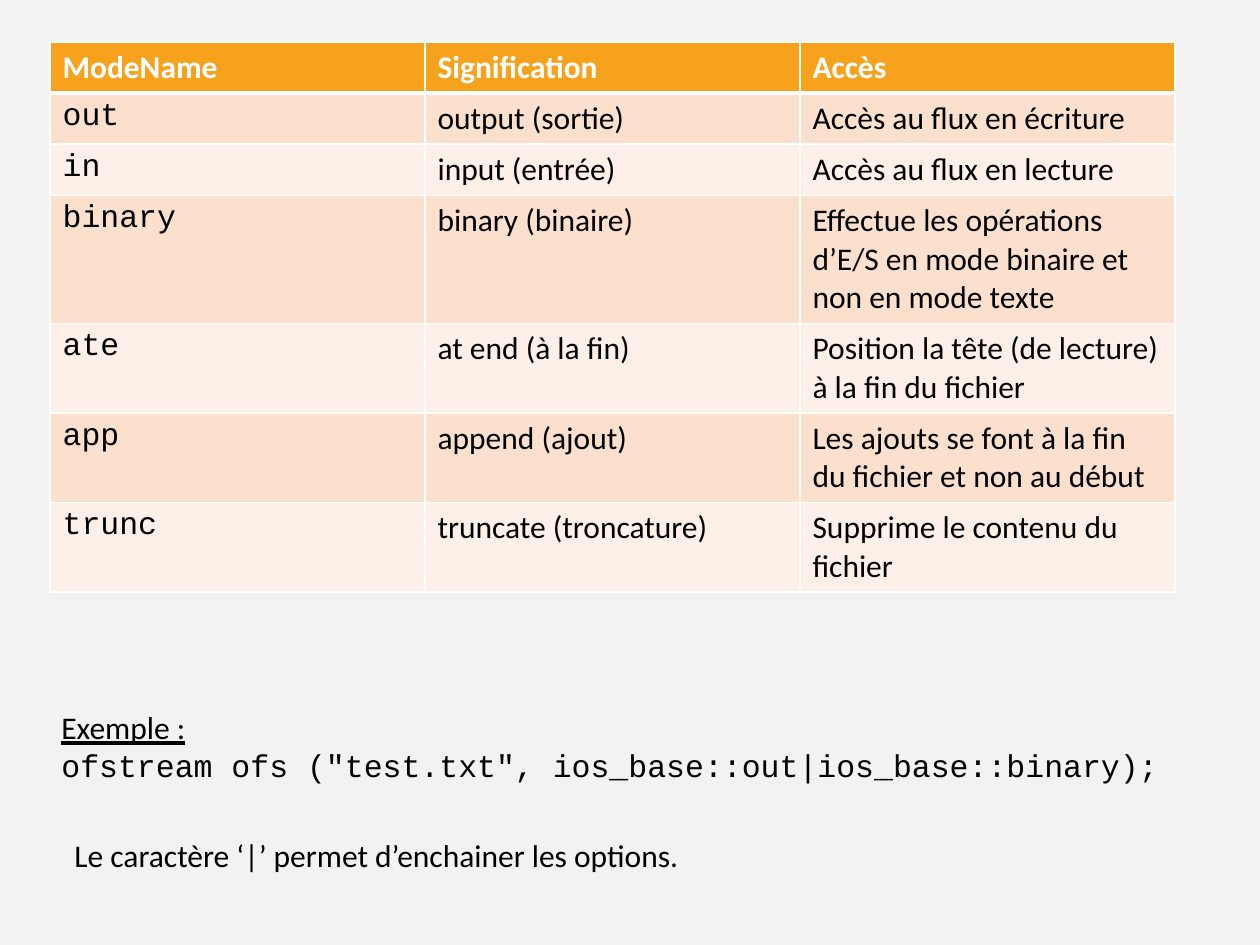
import lxml.etree
import pptx
import pptx.dml.color
import pptx.enum.text
import pptx.oxml.ns
import pptx.util

EMU_PER_PX = 914400 / 126
PROSE, CODE = "Calibri", "Courier New"
BLACK, WHITE, ORANGE = "000000", "FFFFFF", "F6A21D"
BANDS = ("FBE0CD", "FDF0E8")

MODES = [
    ("ModeName", "Signification", "Accès"),
    ("out", "output (sortie)", "Accès au flux en écriture"),
    ("in", "input (entrée)", "Accès au flux en lecture"),
    ("binary", "binary (binaire)",
     "Effectue les opérations d’E/S en mode binaire et non en mode texte"),
    ("ate", "at end (à la fin)",
     "Position la tête (de lecture) à la fin du fichier"),
    ("app", "append (ajout)",
     "Les ajouts se font à la fin du fichier et non au début"),
    ("trunc", "truncate (troncature)", "Supprime le contenu du fichier"),
]


def px(length):
    return pptx.util.Emu(round(length * EMU_PER_PX))


def color(value):
    return pptx.dml.color.RGBColor.from_string(value)


class Deck:
    """Holds the text style and the current slide."""

    def __init__(self, width, height, background, size=18):
        self.presentation = pptx.Presentation()
        self.presentation.slide_width = px(width)
        self.presentation.slide_height = px(height)
        self.size = pptx.util.Pt(size)
        blank = self.presentation.slide_layouts[6]
        self.slide = self.presentation.slides.add_slide(blank)
        fill = self.slide.background.fill
        fill.solid()
        fill.fore_color.rgb = color(background)

    def run(self, paragraph, words, font=PROSE, ink=BLACK, bold=False, underline=False):
        run = paragraph.add_run()
        run.text = words
        run.font.name = font
        run.font.size = self.size
        run.font.color.rgb = color(ink)
        run.font.bold = bold
        run.font.underline = underline

    def text(self, left, top, width, height, *lines):
        """Each line is its words and a dict of run formatting."""
        frame = self.slide.shapes.add_textbox(
            px(left), px(top), px(width), px(height)).text_frame
        frame.word_wrap = True
        frame.auto_size = pptx.enum.text.MSO_AUTO_SIZE.SHAPE_TO_FIT_TEXT
        for index, (words, style) in enumerate(lines):
            paragraph = frame.add_paragraph() if index else frame.paragraphs[0]
            self.run(paragraph, words, **style)

    def borders(self, cell, top=1, bottom=1):
        properties = cell._tc.get_or_add_tcPr()
        widths = {"lnL": 1, "lnR": 1, "lnT": top, "lnB": bottom}
        for position, (side, width) in enumerate(widths.items()):
            line = lxml.etree.Element(
                pptx.oxml.ns.qn(f"a:{side}"), w=str(pptx.util.Pt(width)))
            fill = lxml.etree.SubElement(line, pptx.oxml.ns.qn("a:solidFill"))
            lxml.etree.SubElement(fill, pptx.oxml.ns.qn("a:srgbClr"), val=WHITE)
            properties.insert(position, line)

    def table(self, left, top, width, height, row_height, rows):
        frame = self.slide.shapes.add_table(
            len(rows), len(rows[0]), px(left), px(top), px(width), px(height))
        for r, row in enumerate(rows):
            frame.table.rows[r].height = px(row_height)
            header = r == 0
            for c, words in enumerate(row):
                cell = frame.table.cell(r, c)
                cell.fill.solid()
                cell.fill.fore_color.rgb = color(ORANGE if header else BANDS[(r - 1) % 2])
                # Heavy rule between the header and the first mode
                self.borders(cell, top=3 if r == 1 else 1, bottom=3 if header else 1)
                self.run(cell.text_frame.paragraphs[0], words,
                         font=CODE if c == 0 and not header else PROSE,
                         ink=WHITE if header else BLACK, bold=header)
        frame.height = px(height)


def main():
    deck = Deck(1260, 945, "F2F2F2")

    # Opening modes
    deck.table(50, 42, 1125, 544, 51, MODES)

    # Example
    deck.text(49, 702, 1134, 89,
              ("Exemple :", {"underline": True}),
              ('ofstream ofs ("test.txt", ios_base::out|ios_base::binary);',
               {"font": CODE}))

    # Remark on combining options
    deck.text(62, 830, 1065, 50,
              ("Le caractère ‘|’ permet d’enchainer les options.", {}))

    deck.presentation.save("out.pptx")


if __name__ == "__main__":
    main()
